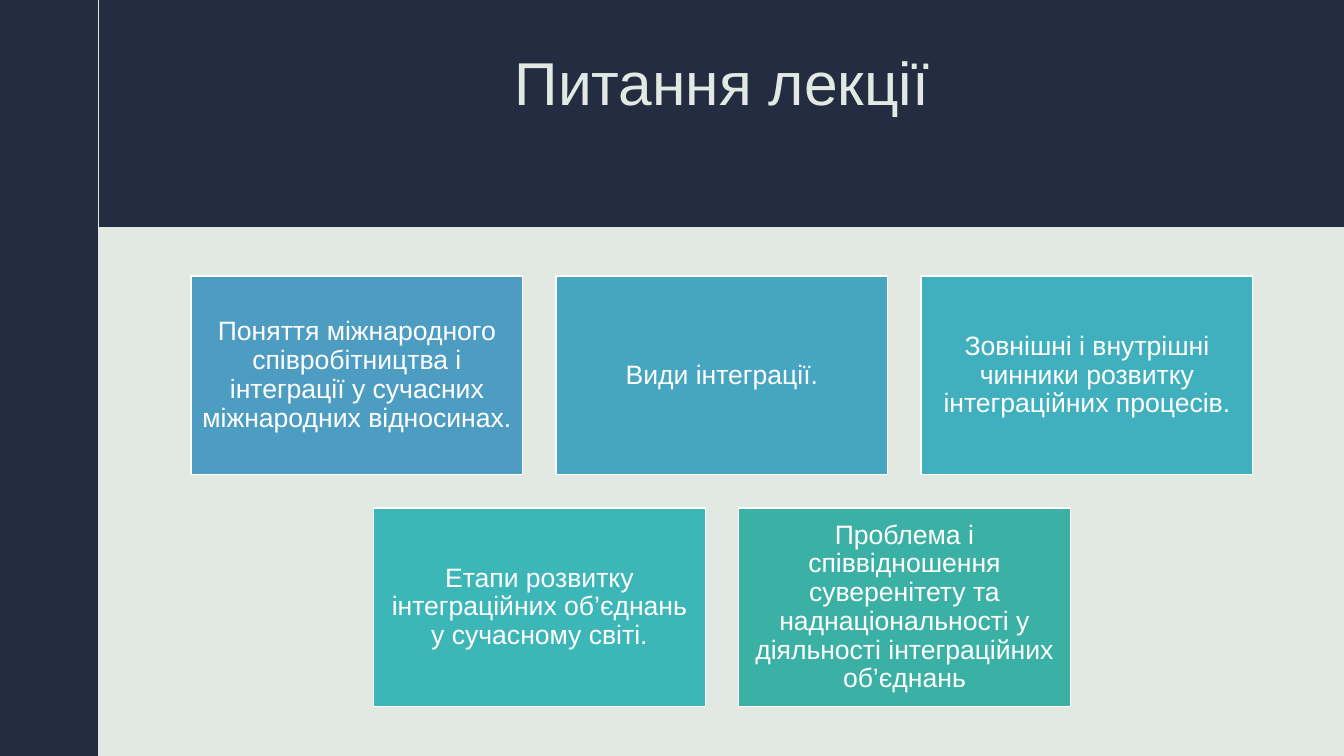
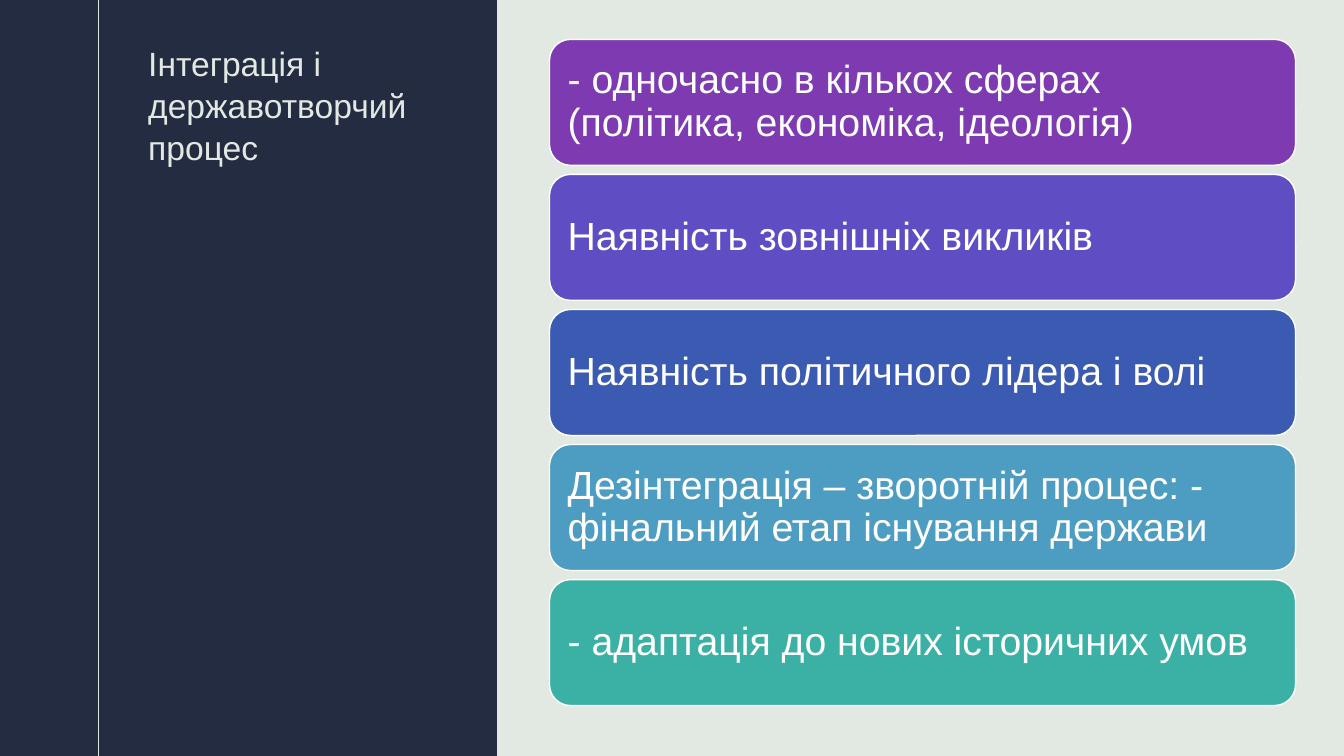
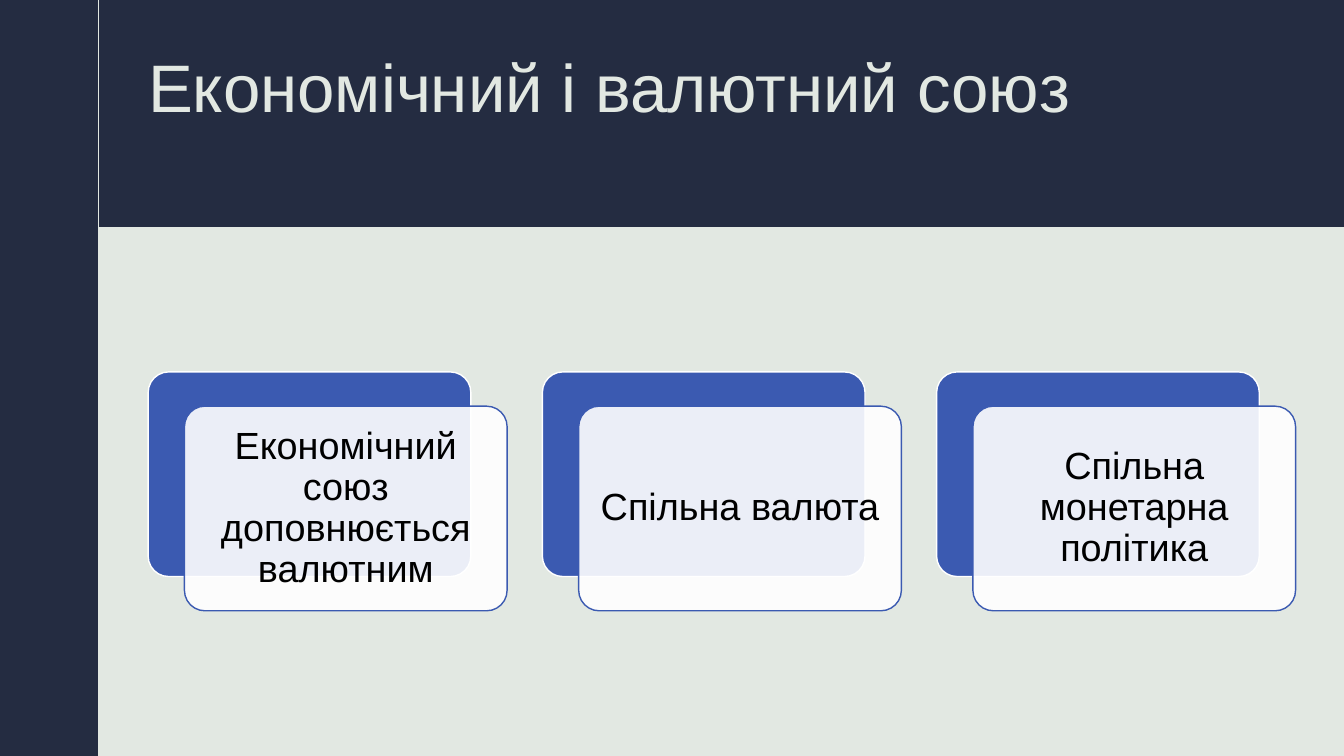
"""Build three lecture slides on international integration."""
import dataclasses

import lxml.etree
import pptx
import pptx.dml.color
import pptx.enum.shapes
import pptx.enum.text
import pptx.oxml.ns
import pptx.util

Inches = pptx.util.Inches
Pt = pptx.util.Pt
Shapes = pptx.enum.shapes.MSO_SHAPE
Align = pptx.enum.text.PP_ALIGN
Anchor = pptx.enum.text.MSO_ANCHOR
Color = pptx.dml.color.RGBColor.from_string


@dataclasses.dataclass(frozen=True)
class Theme:
    font: str = "Arial"
    navy: str = "242C41"
    pale: str = "E2E8E2"
    white: str = "FFFFFF"
    black: str = "000000"
    purple: str = "7E3BB1"
    violet: str = "5F4DC3"
    blue: str = "3B5AB1"
    sky: str = "4D9DC3"
    azure: str = "46A6C1"
    cyan: str = "40B0BE"
    turquoise: str = "3DB6B8"
    teal: str = "3BB1A6"
    question_size: float = 19
    condition_size: float = 28
    feature_size: float = 27


theme = Theme()


def add_box(slide, kind, left, top, width, height, fill, line=None):
    """Add a filled shape without a shadow."""
    shape = slide.shapes.add_shape(kind, Inches(left), Inches(top), Inches(width), Inches(height))
    shape.shadow.inherit = False
    shape.fill.solid()
    shape.fill.fore_color.rgb = Color(fill)
    if line:
        shape.line.color.rgb = Color(line)
        shape.line.width = Pt(1)
    else:
        shape.line.fill.background()
    return shape


def write_text(shape, text, size, color, align, margin, anchor=Anchor.MIDDLE, spacing=0.9):
    """Put one styled paragraph into a shape."""
    frame = shape.text_frame
    frame.word_wrap = True
    frame.vertical_anchor = anchor
    frame.margin_left = frame.margin_right = Inches(margin)
    frame.margin_top = frame.margin_bottom = Inches(margin)
    paragraph = frame.paragraphs[0]
    paragraph.text = text
    paragraph.alignment = align
    paragraph.line_spacing = spacing
    paragraph.font.name = theme.font
    paragraph.font.size = Pt(size)
    paragraph.font.color.rgb = Color(color)


presentation = pptx.Presentation()
presentation.slide_width = Inches(13.33)
presentation.slide_height = Inches(7.5)

rail_width = 0.98
header = [(0, 0, rail_width, 7.5), (rail_width, 0, 12.35, 2.25)]
sidebar = [(0, 0, 4.93, 7.5)]
frames = [
    ("Питання лекції", 43.2, Align.CENTER, (1.47, 0.42, 11.38, 1.38), header),
    ("Інтеграція і державотворчий процес", 24, Align.LEFT, (1.47, 0.41, 2.98, 6.66), sidebar),
    ("Економічний і валютний союз", 48, Align.LEFT, (1.47, 0.42, 11.38, 1.38), header),
]

slides = []
for title, size, align, position, bands in frames:
    slide = presentation.slides.add_slide(presentation.slide_layouts[6])
    slide.background.fill.solid()
    slide.background.fill.fore_color.rgb = Color(theme.pale)
    for band in bands:
        add_box(slide, Shapes.RECTANGLE, *band, theme.navy)
    title_box = slide.shapes.add_textbox(*map(Inches, position))
    write_text(title_box, title, size, theme.pale, align, 0, Anchor.TOP, 1.04)
    rule = slide.shapes.add_connector(
        pptx.enum.shapes.MSO_CONNECTOR.STRAIGHT,
        Inches(rail_width), Inches(0), Inches(rail_width), Inches(7.5),
    )
    rule.line.color.rgb = Color(theme.pale)
    rule.line.width = Pt(0.75)
    lxml.etree.SubElement(rule._element.spPr, pptx.oxml.ns.qn("a:effectLst"))
    slides.append(slide)

questions_slide, conditions_slide, features_slide = slides

question_rows = [
    [
        ("Поняття міжнародного співробітництва і інтеграції у сучасних міжнародних відносинах.", theme.sky),
        ("Види інтеграції.", theme.azure),
        ("Зовнішні і внутрішні чинники розвитку інтеграційних процесів.", theme.cyan),
    ],
    [
        ("Етапи розвитку інтеграційних об’єднань у сучасному світі.", theme.turquoise),
        ("Проблема і співвідношення суверенітету та наднаціональності у діяльності інтеграційних об’єднань", theme.teal),
    ],
]
card_width, card_height, card_gap, grid_center = 3.29, 1.97, 0.33, 7.16
for row, questions in enumerate(question_rows):
    row_width = len(questions) * (card_width + card_gap) - card_gap
    top = 2.74 + row * (card_height + card_gap)
    for column, (text, fill) in enumerate(questions):
        left = grid_center - row_width / 2 + column * (card_width + card_gap)
        card = add_box(questions_slide, Shapes.RECTANGLE, left, top, card_width, card_height, fill, theme.white)
        write_text(card, text, theme.question_size, theme.white, Align.CENTER, 0.08)

conditions = [
    ("- одночасно в кількох сферах (політика, економіка, ідеологія)", theme.purple),
    ("Наявність зовнішніх викликів", theme.violet),
    ("Наявність політичного лідера і волі", theme.blue),
    ("Дезінтеграція – зворотній процес: - фінальний етап існування держави", theme.sky),
    ("- адаптація до нових історичних умов", theme.teal),
]
for index, (text, fill) in enumerate(conditions):
    bar = add_box(conditions_slide, Shapes.ROUNDED_RECTANGLE, 5.45, 0.39 + index * 1.34, 7.4, 1.25, fill, theme.white)
    write_text(bar, text, theme.condition_size, theme.white, Align.LEFT, 0.12)

features = ["Економічний союз доповнюється валютним", "Спільна валюта", "Спільна монетарна політика"]
for index, text in enumerate(features):
    left = 1.47 + index * 3.91
    back = add_box(features_slide, Shapes.ROUNDED_RECTANGLE, left, 3.69, 3.2, 2.03, theme.blue, theme.white)
    front = add_box(features_slide, Shapes.ROUNDED_RECTANGLE, left + 0.36, 4.03, 3.2, 2.03, theme.white, theme.blue)
    back.adjustments[0] = front.adjustments[0] = 0.1
    fill_color = front._element.spPr.find(pptx.oxml.ns.qn("a:solidFill"))[0]
    lxml.etree.SubElement(fill_color, pptx.oxml.ns.qn("a:alpha"), val="90000")
    write_text(front, text, theme.feature_size, theme.black, Align.CENTER, 0.11)

presentation.save("out.pptx")
